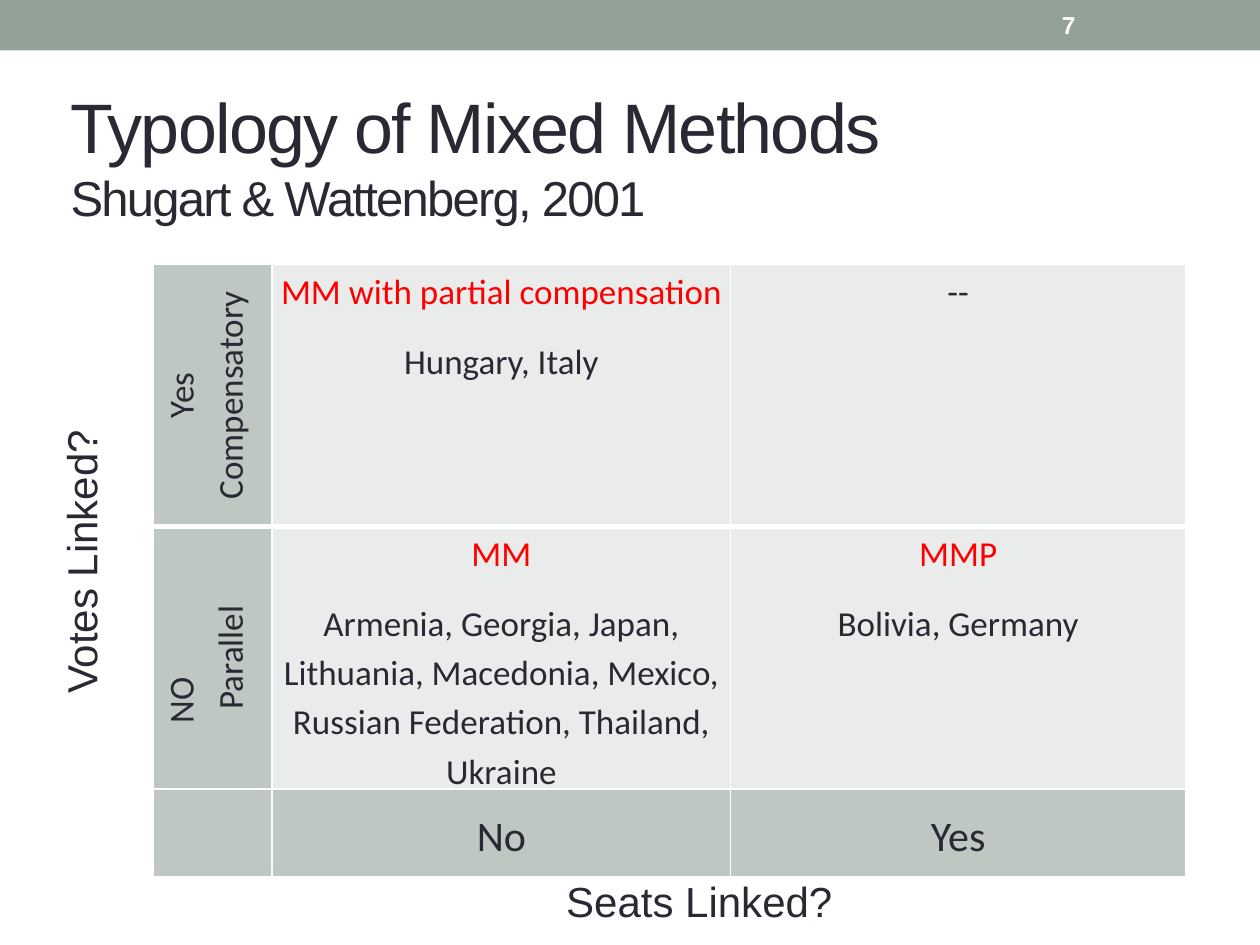
import pptx
import pptx.util
import pptx.dml.color
import pptx.enum.shapes
import pptx.enum.text
import pptx.oxml.ns
from lxml import etree

Inches, Pt = pptx.util.Inches, pptx.util.Pt
Align, Anchor = pptx.enum.text.PP_ALIGN, pptx.enum.text.MSO_ANCHOR
Fit = pptx.enum.text.MSO_AUTO_SIZE
qn = pptx.oxml.ns.qn

# Content
TITLE = [("Typology of Mixed Methods", "title"),
         ("Shugart & Wattenberg, 2001", "sub")]
NUMBER = "7"
AXES = [("Seats Linked?", (4.21, 6.9, 2.68, 0.5), 0),
        ("Votes Linked?", (-0.7, 4.21, 2.68, 0.5), 270)]
GRID = [  # each cell is a list of (text, style)
    [[("Yes Compensatory", "cell")],
     [("MM with partial compensation", "key"), ("Hungary, Italy", "cell")],
     [("--", "cell")]],
    [[("NO", "cell"), ("Parallel", "cell")],
     [("MM", "key"),
      ("Armenia, Georgia, Japan, Lithuania, Macedonia, Mexico, "
       "Russian Federation, Thailand, Ukraine", "cell")],
     [("MMP", "key"), ("Bolivia, Germany", "cell")]],
    [[], [("No", "foot")], [("Yes", "foot")]],
]
COLS = [0.94, 3.64, 3.61]
ROWS = [1.89, 1.78, 0.7]

# Theme: colours, and type as (font, size, colour, bold)
THEME = {
    "bar": "93A299", "head": "BEC7C2", "body": "E9ECEB", "rule": "FFFFFF",
    "title": ("Arial", 40, "292934", False),
    "sub": ("Arial", 28, "292934", False),
    "number": ("Arial", 14, "FFFFFF", True),
    "axis": ("Arial", 24, "292934", False),
    "cell": ("Calibri", 20, "292934", False),
    "key": ("Calibri", 20, "FF0000", False),
    "foot": ("Calibri", 24, "292934", False),
}


def rgb(name):
    return pptx.dml.color.RGBColor.from_string(THEME.get(name, name))


def put(item, **vals):
    for name, val in vals.items():
        setattr(item, name, val)


def paint(item, name):
    item.fill.solid()
    item.fill.fore_color.rgb = rgb(name)


def write(para, text, style):
    font, size, tint, bold = THEME[style]
    run = para.add_run()
    run.text = text
    put(run.font, name=font, size=Pt(size), bold=bold)
    run.font.color.rgb = rgb(tint)
    return run


def label(slide, text, style, box, **vals):
    shape = slide.shapes.add_textbox(*map(Inches, box))
    put(shape.text_frame, word_wrap=True, **vals)
    write(shape.text_frame.paragraphs[0], text, style)
    return shape


def edge(cell, sides):
    props = cell._tc.get_or_add_tcPr()
    for side, width in sides.items():
        line = etree.SubElement(props, qn("a:ln" + side), w=str(Pt(width)))
        fill = etree.SubElement(line, qn("a:solidFill"))
        etree.SubElement(fill, qn("a:srgbClr"), val=THEME["rule"])


def fill_cell(cell, lines, row, col):
    thick = {"L": 1, "R": 1, "T": 3 if row == 1 else 1,
             "B": 3 if row == 0 else 1}
    edge(cell, thick)
    side = col == 0
    paint(cell, "head" if side or row == 2 else "body")
    put(cell, margin_left=Inches(0.07), margin_right=Inches(0.07),
        margin_top=0, margin_bottom=0,
        vertical_anchor=Anchor.MIDDLE if side or row == 2 else Anchor.TOP)
    frame = cell.text_frame
    for i, (text, style) in enumerate(lines):
        para = frame.paragraphs[0] if i == 0 else frame.add_paragraph()
        put(para, alignment=Align.CENTER, line_spacing=1.15,
            space_before=Pt(6), space_after=Pt(6))
        write(para, text, style)
    if side and lines:
        cell._tc.get_or_add_tcPr().set("vert", "vert270")
    if side and len(lines) == 2:  # first line sits near the start
        first, last = frame.paragraphs
        put(first, alignment=Align.LEFT, space_after=Pt(0))
        first._p.get_or_add_pPr().set("marL", str(Inches(0.45)))
        last.space_before = Pt(0)


def main():
    deck = pptx.Presentation()
    put(deck, slide_width=Inches(10), slide_height=Inches(7.5))
    slide = deck.slides.add_slide(deck.slide_layouts[5])

    # Top bar and slide number
    bar = slide.shapes.add_shape(pptx.enum.shapes.MSO_SHAPE.RECTANGLE,
                                 0, 0, Inches(10), Inches(0.4))
    bar.shadow.inherit = False
    paint(bar, "bar")
    bar.line.fill.background()
    label(slide, NUMBER, "number", (8.33, 0.02, 1.17, 0.36),
          vertical_anchor=Anchor.MIDDLE)

    # Title
    title = slide.shapes.title
    put(title, left=Inches(0.46), top=Inches(0.52),
        width=Inches(9.53), height=Inches(1.42))
    put(title.text_frame, vertical_anchor=Anchor.MIDDLE,
        auto_size=Fit.NONE, word_wrap=True)
    para = title.text_frame.paragraphs[0]
    para.alignment = Align.LEFT
    for i, (text, style) in enumerate(TITLE):
        if i:
            para.add_line_break()
        run = write(para, text, style)
        run.font._element.set("spc", "-100")

    # Table
    frame = slide.shapes.add_table(len(ROWS), len(COLS), Inches(1.22),
                                   Inches(2.1), Inches(8.19), Inches(4.67))
    table = frame.table
    put(table, first_row=False, horz_banding=False)
    for col, width in zip(table.columns, COLS):
        col.width = Inches(width)
    for row, height in zip(table.rows, ROWS):
        row.height = Inches(height)
    frame.height = Inches(4.67)
    for r, cells in enumerate(GRID):
        for c, lines in enumerate(cells):
            fill_cell(table.cell(r, c), lines, r, c)

    # Axis names
    for text, box, turn in AXES:
        shape = label(slide, text, "axis", box, auto_size=Fit.SHAPE_TO_FIT_TEXT)
        shape.rotation = turn
        shape.text_frame.paragraphs[0].alignment = Align.CENTER

    deck.save("out.pptx")


if __name__ == "__main__":
    main()
